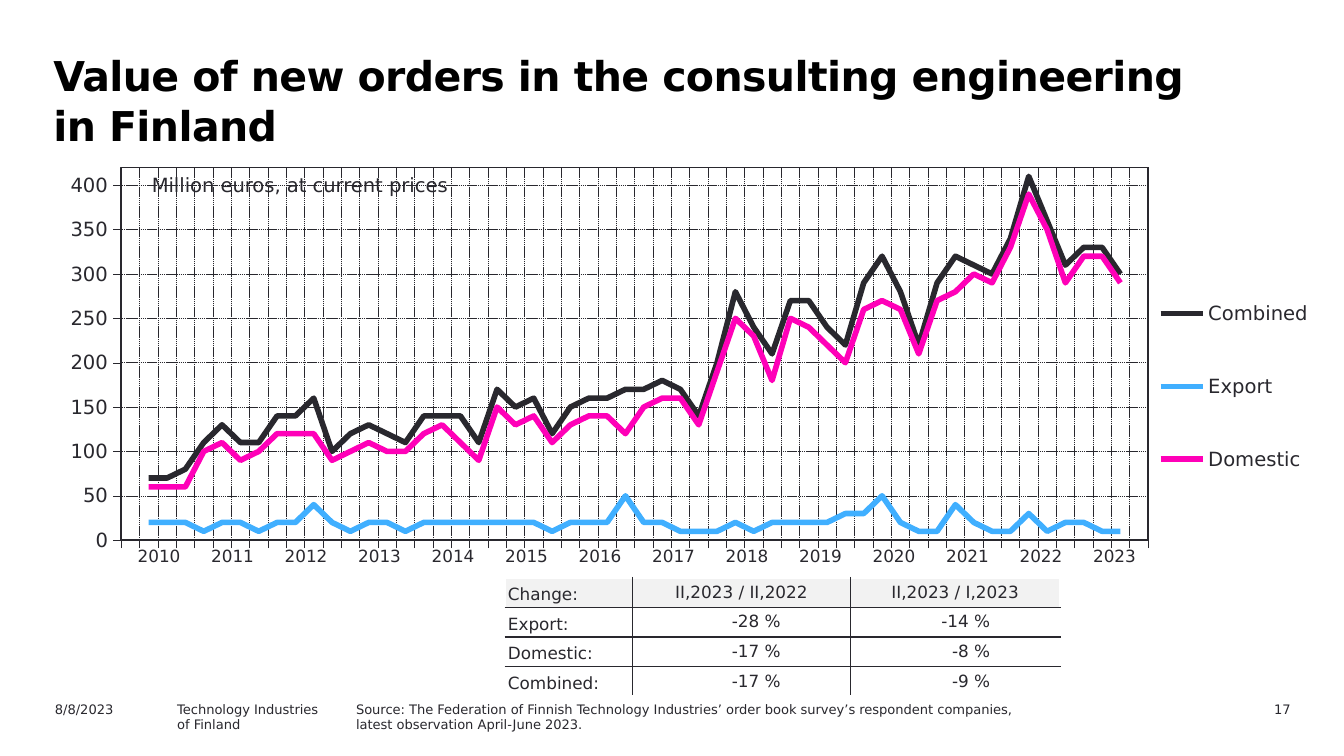
from lxml import etree
from pptx import Presentation
from pptx import util as u
from pptx.chart.data import CategoryChartData
from pptx.dml.color import RGBColor
from pptx.enum import chart as ch, dml, text
from pptx.oxml import parse_xml
from pptx.oxml.ns import nsdecls, qn

Cm = u.Cm
INK = RGBColor(0x29, 0x28, 0x2E)
BLACK = RGBColor(0, 0, 0)
WHITE = RGBColor(0xFF, 0xFF, 0xFF)
GREY = RGBColor(0xF2, 0xF2, 0xF2)
BLUE = RGBColor(0x40, 0xAF, 0xFF)
PINK = RGBColor(0xFF, 0x00, 0xB8)
FONT = "DejaVu Sans"
NO_STYLE = "{2D5ABB26-0587-4C30-8999-92F81FD0307C}"
LEFT, CENTER, RIGHT = text.PP_ALIGN.LEFT, text.PP_ALIGN.CENTER, text.PP_ALIGN.RIGHT


def write(tf, content, size=7, color=INK, bold=False, align=LEFT, spacing=None, track=None):
    for i, line in enumerate(content.split("\n")):
        p = tf.paragraphs[0] if i == 0 else tf.add_paragraph()
        p.alignment = align
        p.line_spacing = spacing
        r = p.add_run()
        r.text = line
        r.font.name = FONT
        r.font.size = u.Pt(size)
        r.font.bold = bold
        r.font.color.rgb = color
        if track:
            r.font._element.set("spc", str(track))


def set_layout(parent, index, x, y, w, h, inner=False):
    for old in parent.findall(qn("c:layout")):
        parent.remove(old)
    target = '<c:layoutTarget val="inner"/>' if inner else ""
    parent.insert(index, parse_xml(
        f'<c:layout {nsdecls("c")}><c:manualLayout>{target}'
        '<c:xMode val="edge"/><c:yMode val="edge"/>'
        f'<c:x val="{x}"/><c:y val="{y}"/><c:w val="{w}"/><c:h val="{h}"/>'
        '</c:manualLayout></c:layout>'))


prs = Presentation()
prs.slide_width, prs.slide_height = Cm(25.4), Cm(14.29)
s = prs.slides.add_slide(prs.slide_layouts[6])

SERIES = [
    ("Combined", INK, [
        70, 70, 80, 110, 130, 110, 110, 140, 140, 160, 100, 120, 130, 120, 110, 140, 140, 140,
        110, 170, 150, 160, 120, 150, 160, 160, 170, 170, 180, 170, 140, 200, 280, 240, 210, 270,
        270, 240, 220, 290, 320, 280, 220, 290, 320, 310, 300, 340, 410, 360, 310, 330, 330, 300]),
    ("Export", BLUE, [
        20, 20, 20, 10, 20, 20, 10, 20, 20, 40, 20, 10, 20, 20, 10, 20, 20, 20,
        20, 20, 20, 20, 10, 20, 20, 20, 50, 20, 20, 10, 10, 10, 20, 10, 20, 20,
        20, 20, 30, 30, 50, 20, 10, 10, 40, 20, 10, 10, 30, 10, 20, 20, 10, 10]),
    ("Domestic", PINK, [
        60, 60, 60, 100, 110, 90, 100, 120, 120, 120, 90, 100, 110, 100, 100, 120, 130, 110,
        90, 150, 130, 140, 110, 130, 140, 140, 120, 150, 160, 160, 130, 190, 250, 230, 180, 250,
        240, 220, 200, 260, 270, 260, 210, 270, 280, 300, 290, 330, 390, 350, 290, 320, 320, 290]),
]
data = CategoryChartData(number_format="#,##0")
data.categories = [str(n) for n in range(1, 57)]
for name, color, values in SERIES:
    data.add_series(name, [None] + values + [None])
chart = s.shapes.add_chart(ch.XL_CHART_TYPE.LINE, Cm(0.51), Cm(2.82), Cm(24.41), Cm(8.46), data).chart
chart.has_title = False
chart.font.name = FONT
chart.font.size = u.Pt(10.5)
chart.font.color.rgb = INK
chart.plots[0].vary_by_categories = False
for ser, (name, color, values) in zip(chart.plots[0].series, SERIES):
    ser.smooth = False
    ser.format.line.color.rgb = color
    ser.format.line.width = u.Pt(3)

for axis in (chart.category_axis, chart.value_axis):
    axis.has_major_gridlines = True
    axis.major_tick_mark = ch.XL_TICK_MARK.OUTSIDE
    axis.minor_tick_mark = ch.XL_TICK_MARK.NONE
    axis.format.line.color.rgb = INK
    axis.format.line.width = u.Pt(0.22)
    grid = axis.major_gridlines.format.line
    grid.color.rgb = INK
    grid.width = u.Pt(0.25)
    grid.dash_style = dml.MSO_LINE.SQUARE_DOT
chart.category_axis.tick_label_position = ch.XL_TICK_LABEL_POSITION.NONE
va = chart.value_axis
va.minimum_scale, va.maximum_scale, va.major_unit = 0, 420, 50
va.tick_labels.number_format = "#,##0"
va.tick_labels.number_format_is_linked = False

chart.has_legend = True
chart.legend.position = ch.XL_LEGEND_POSITION.RIGHT
chart.legend.include_in_layout = False
chart.legend.font.name = FONT
chart.legend.font.size = u.Pt(10.5)
chart.legend.font.color.rgb = INK
set_layout(chart.legend._element, 1, 0.88, 0.23, 0.12, 0.6)
area = chart._chartSpace.chart.plotArea
set_layout(area, 0, 0.073, 0.041, 0.795, 0.833, inner=True)
area.append(parse_xml(
    f'<c:spPr {nsdecls("c", "a")}><a:noFill/><a:ln w="12700"><a:solidFill>'
    f'<a:srgbClr val="{INK}"/></a:solidFill></a:ln></c:spPr>'))

TEXTS = [
    ((0.71, 0.79, 22.2, 1.8), True, "Value of new orders in the consulting engineering in Finland",
     dict(size=22, color=BLACK, bold=True, spacing=u.Pt(27), track=-30)),
    ((22.25, 13.13, 2.39, 0.46), True, "17", dict(align=RIGHT)),
    ((2.62, 3.15, 6.2, 0.69), False, "Million euros, at current prices", dict(size=10.5)),
    ((6.48, 13.13, 13.21, 1.02), True,
     "Source: The Federation of Finnish Technology Industries’ order book survey’s "
     "respondent companies, latest observation April-June 2023.", {}),
    ((3.1, 13.13, 4.57, 0.46), True, "Technology Industries\nof Finland", {}),
    ((0.79, 13.13, 2.54, 0.46), True, "8/8/2023", {}),
]
for box, wrap, content, fmt in TEXTS:
    tf = s.shapes.add_textbox(*map(Cm, box)).text_frame
    tf.word_wrap = wrap
    if fmt.get("bold"):
        tf.margin_left, tf.margin_top = Cm(0.3), Cm(0.14)
    write(tf, content, **fmt)

CHANGES = [
    ("Change:", "II,2023 / II,2022", "II,2023 / I,2023"),
    ("Export:", "-28 %", "-14 %"),
    ("Domestic:", "-17 %", "-8 %"),
    ("Combined:", "-17 %", "-9 %"),
]
YEARS = [[str(y) for y in range(2010, 2024)]]
TABLES = [
    (CHANGES, (9.55, 10.92), [2.4, 4.12, 3.96], 0.56),
    (YEARS, (2.31, 10.21), [1.39] * 14, 0.79),
]
for rows, (x, y), widths, height in TABLES:
    tbl = s.shapes.add_table(len(rows), len(widths), Cm(x), Cm(y),
                             Cm(sum(widths)), Cm(height * len(rows))).table
    tbl.first_row = tbl.horz_banding = False
    tbl._tbl.tblPr.find(qn("a:tableStyleId")).text = NO_STYLE
    for col, width in zip(tbl.columns, widths):
        col.width = Cm(width)
    for i, row in enumerate(rows):
        tbl.rows[i].height = Cm(height)
        for j, value in enumerate(row):
            cell = tbl.cell(i, j)
            if rows is YEARS:
                cell.fill.background()
                write(cell.text_frame, value, size=9, align=CENTER)
                continue
            number = i > 0 and j > 0
            cell.margin_left = cell.margin_top = cell.margin_bottom = Cm(0.05)
            cell.margin_right = Cm(1.32 if number else 0.05)
            cell.vertical_anchor = text.MSO_ANCHOR.MIDDLE if j else text.MSO_ANCHOR.BOTTOM
            inside = {"lnL": j > 0, "lnR": j < len(row) - 1, "lnT": i > 0, "lnB": i < len(rows) - 1}
            for tag, inner in inside.items():
                ln = etree.SubElement(cell._tc.get_or_add_tcPr(), qn("a:" + tag), w="12700")
                fill = etree.SubElement(ln, qn("a:solidFill"))
                etree.SubElement(fill, qn("a:srgbClr"), val=str(INK if inner else WHITE))
            cell.fill.solid()
            cell.fill.fore_color.rgb = WHITE if i else GREY
            write(cell.text_frame, value, size=9, align=RIGHT if number else CENTER if j else LEFT)

prs.save("out.pptx")
